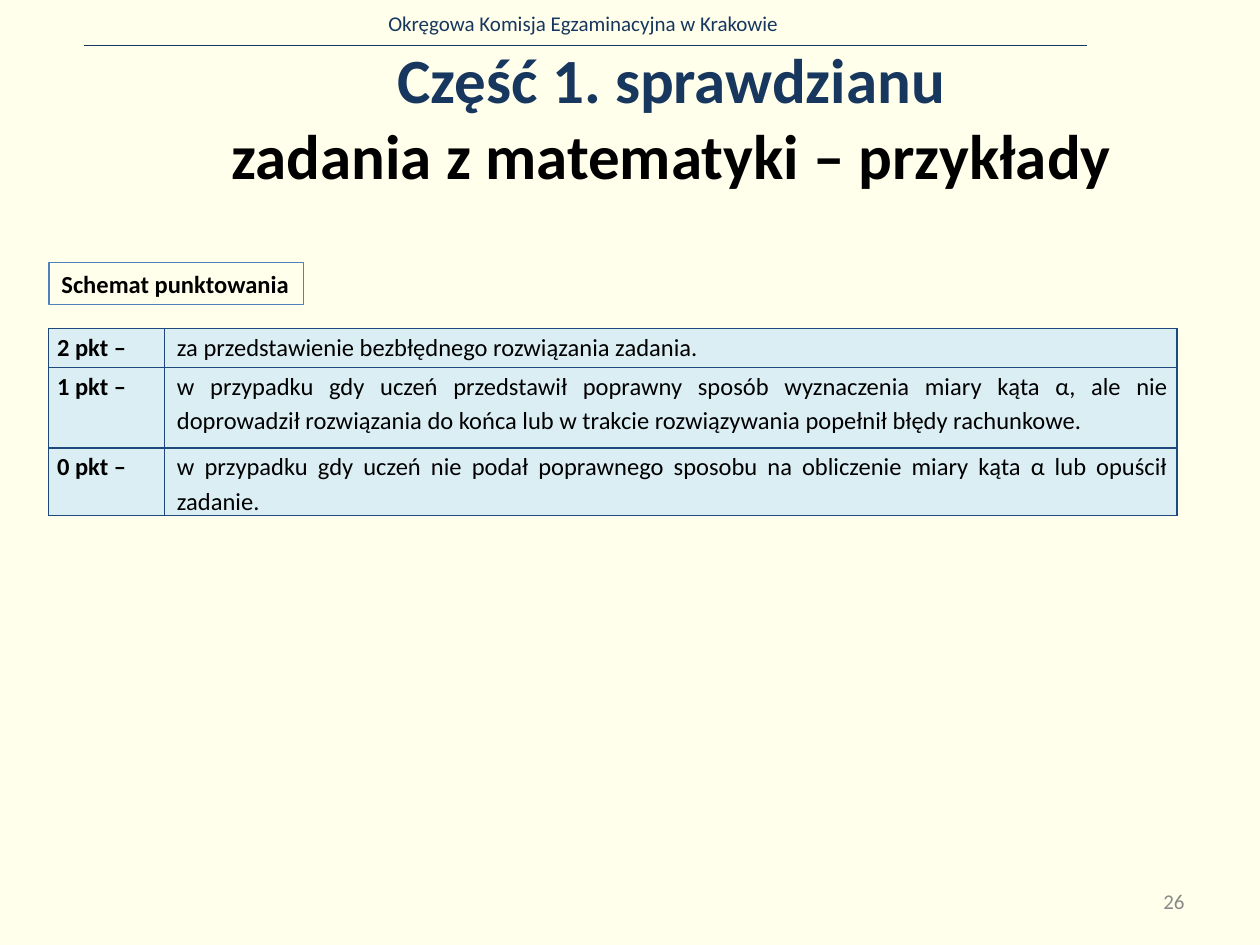
from lxml import etree
from pptx import Presentation
from pptx.dml.color import RGBColor
from pptx.enum.shapes import MSO_CONNECTOR, MSO_SHAPE
from pptx.enum.text import MSO_ANCHOR, PP_ALIGN
from pptx.oxml.ns import qn
from pptx.util import Pt

LEFT, MID, RIGHT, JUST = (PP_ALIGN.LEFT, PP_ALIGN.CENTER,
                          PP_ALIGN.RIGHT, PP_ALIGN.JUSTIFY)
TOP, CENTER = MSO_ANCHOR.TOP, MSO_ANCHOR.MIDDLE
STRAIGHT, RECT = MSO_CONNECTOR.STRAIGHT, MSO_SHAPE.RECTANGLE

COLORS = {
    "page": "FFFFEB", "navy": "17375E", "black": "000000", "gray": "898989",
    "blue": "4F81BD", "edge": "1F497D", "cell": "DBEEF4",
}
SCORES = [
    ("2 pkt –", "za przedstawienie bezbłędnego rozwiązania zadania."),
    ("1 pkt –", "w przypadku gdy uczeń przedstawił poprawny sposób wyznaczenia "
     "miary kąta α, ale nie doprowadził rozwiązania do końca lub w trakcie "
     "rozwiązywania popełnił błędy rachunkowe."),
    ("0 pkt –", "w przypadku gdy uczeń nie podał poprawnego sposobu na "
     "obliczenie miary kąta α lub opuścił zadanie."),
]


def rgb(name):
    return RGBColor.from_string(COLORS[name])


def write(frame, *lines, size=14, colors=("black",), bold=False,
          align=LEFT, space=None, indent=0):
    """Fill one paragraph, with a line break and a colour for each line."""
    para = frame.paragraphs[0]
    para.alignment = align
    if space:
        para.line_spacing = space
    if indent:
        para._p.get_or_add_pPr().set("marL", str(Pt(indent)))
    for i, (line, color) in enumerate(zip(lines, colors)):
        if i:
            para.add_line_break()
        run = para.add_run()
        run.text = line
        font = run.font
        font.name, font.size, font.bold = "Calibri", Pt(size), bold
        font.color.rgb = rgb(color)
    para.font.size = Pt(size)


def add_text(slide, box, *lines, anchor=TOP, **style):
    frame = slide.shapes.add_textbox(*map(Pt, box)).text_frame
    frame.word_wrap = True
    frame.vertical_anchor = anchor
    write(frame, *lines, **style)


def add_rule(slide, left, right, y):
    rule = slide.shapes.add_connector(
        STRAIGHT, Pt(left), Pt(y), Pt(right), Pt(y))
    rule.line.color.rgb = rgb("navy")
    rule.line.width = Pt(0.5)
    etree.SubElement(rule._element.spPr, qn("a:effectLst"))


def add_label(slide, box, text):
    label = slide.shapes.add_shape(RECT, *map(Pt, box))
    label.shadow.inherit = False
    label.fill.background()
    label.line.color.rgb = rgb("blue")
    label.line.width = Pt(0.75)
    label.text_frame.word_wrap = False
    write(label.text_frame, text, bold=True)


def style_cell(cell, left, right):
    cell.margin_left, cell.margin_right = Pt(left), Pt(right)
    cell.margin_top = cell.margin_bottom = 0
    props = cell._tc.get_or_add_tcPr()
    for side in "LRTB":
        edge = etree.SubElement(props, qn(f"a:ln{side}"), w=str(Pt(1)))
        fill = etree.SubElement(edge, qn("a:solidFill"))
        etree.SubElement(fill, qn("a:srgbClr"), val=COLORS["edge"])
    cell.fill.solid()
    cell.fill.fore_color.rgb = rgb("cell")


def add_scores(slide, box, widths, heights):
    table = slide.shapes.add_table(
        len(SCORES), len(widths), *map(Pt, box)).table
    table.first_row = table.horz_banding = False
    for col, width in zip(table.columns, widths):
        col.width = Pt(width)
    for row, height, (points, rule) in zip(table.rows, heights, SCORES):
        row.height = Pt(height)
        head, body = row.cells
        style_cell(head, 5, 1.5)
        write(head.text_frame, points, bold=True, align=JUST, space=1.15)
        style_cell(body, 1.5, 5)
        write(body.text_frame, rule, align=JUST, space=1.15, indent=5.75)


def main():
    deck = Presentation()
    deck.slide_width, deck.slide_height = Pt(720), Pt(540)
    slide = deck.slides.add_slide(deck.slide_layouts[6])
    slide.background.fill.solid()
    slide.background.fill.fore_color.rgb = rgb("page")

    add_text(slide, (18.7, 2.2, 629.3, 21.6),
             "Okręgowa Komisja Egzaminacyjna w Krakowie",
             size=12, colors=("navy",), align=MID)
    add_rule(slide, 48, 621, 25.9)
    add_text(slide, (88.5, 21.6, 590.5, 90),
             "Część 1. sprawdzianu", "zadania z matematyki – przykłady",
             size=36, colors=("navy", "black"), bold=True, align=MID,
             anchor=CENTER)
    add_text(slide, (516, 500.5, 168, 28.8), "26", size=12,
             colors=("gray",), align=RIGHT, anchor=CENTER)
    add_label(slide, (28, 149.8, 145.4, 24.3), "Schemat punktowania")
    add_scores(slide, (27.6, 187.8, 645, 106.6), (66.3, 578.7),
               (22.3, 46, 38.3))
    deck.save("out.pptx")


if __name__ == "__main__":
    main()
